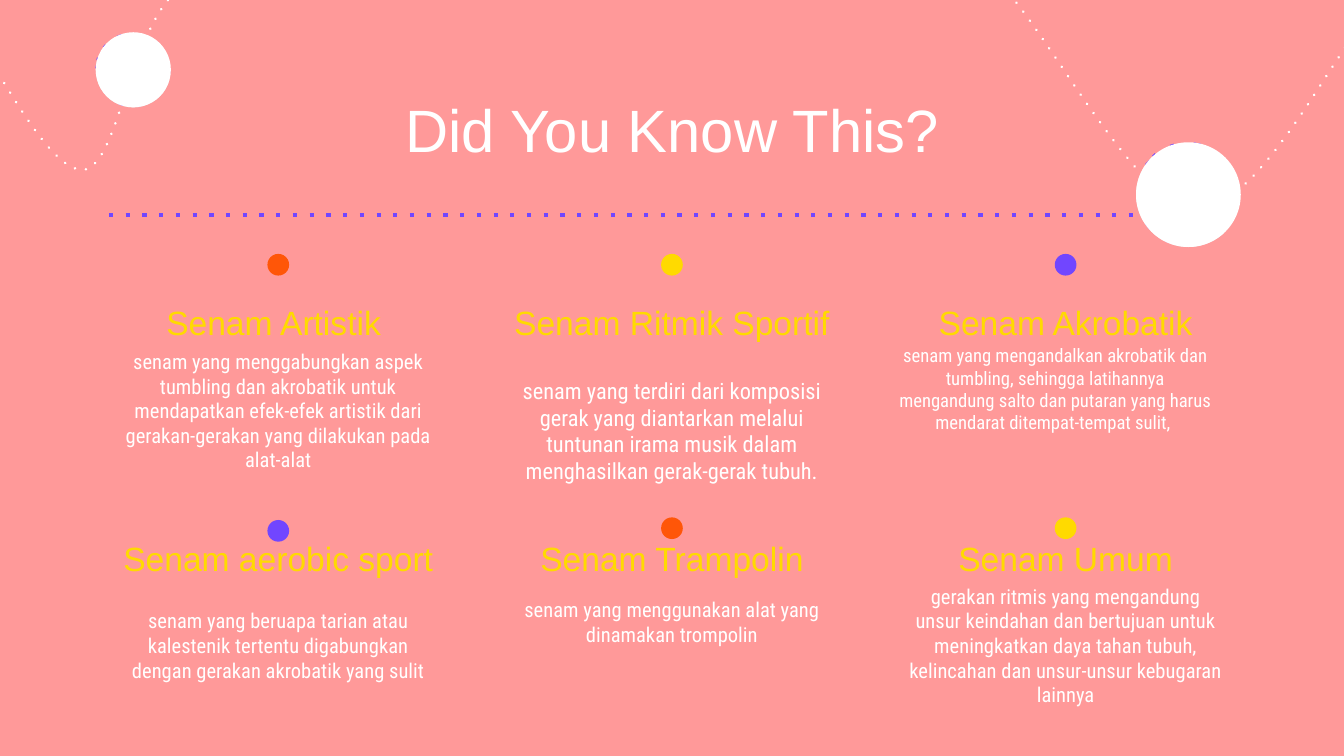
import math

import pptx
import pptx.chart.data
import pptx.dml.color
import pptx.enum.dml
import pptx.enum.shapes
import pptx.enum.text
import pptx.util
from lxml import etree
from pptx.util import Cm

COLORS = {"pink": "FF9999", "white": "FFFFFF", "yellow": "FFDA00",
          "orange": "FF5608", "violet": "7146FF", "shade": "EAEBEC"}
HEADING_FONT, BODY_FONT = "Arial", "Roboto Condensed"
COLUMN_LEFT, COLUMN_STEP, COLUMN_WIDTH = 2.01, 7.44, 6.5
DOT_SIZE = 0.41

ROWS = [
    (5.46, [
        ("Senam Artistik ", "senam yang menggabungkan aspek tumbling dan akrobatik untuk "
         "mendapatkan efek-efek artistik dari gerakan-gerakan yang dilakukan pada alat-alat",
         0, 6.96, 11, "orange", 4.8),
        ("Senam Ritmik Sportif", "senam yang terdiri dari komposisi gerak yang diantarkan "
         "melalui tuntunan irama musik dalam menghasilkan gerak-gerak tubuh.",
         0, 7.34, 12, "yellow", 4.8),
        ("Senam Akrobatik", "senam yang mengandalkan akrobatik dan tumbling, sehingga latihannya "
         "mengandung salto dan putaran yang harus mendarat ditempat-tempat sulit, ",
         -0.2, 6.55, 10, "violet", 4.8),
    ]),
    (9.91, [
        ("Senam aerobic sport", "senam yang beruapa tarian atau kalestenik tertentu "
         "digabungkan dengan gerakan akrobatik yang sulit",
         0, 11.4, 11, "violet", 9.83),
        ("Senam Trampolin", "senam yang menggunakan alat yang dinamakan trompolin",
         0, 10.95, 11, "orange", 9.78),
        ("Senam Umum", "gerakan ritmis yang mengandung unsur keindahan dan bertujuan untuk "
         "meningkatkan daya tahan tubuh, kelincahan dan unsur-unsur kebugaran lainnya",
         0, 11.4, 11, "yellow", 9.78),
    ]),
]

RIGHT_TRAIL = [(17.5, -0.25), (17.73, -0.28), (17.98, -1.09), (18.82, -0.38), (19.66, 0.33),
               (21.39, 3.78), (22.53, 3.96), (23.67, 4.11), (25.12, 1.17), (25.63, 0.64)]
LEFT_TRAIL = [(-0.38, 0.86), (-0.05, 1.24), (0.99, 3.38), (1.63, 3.2), (2.29, 3.0),
              (2.49, 0.25), (3.53, -0.3), (4.55, -0.86), (7.11, -0.2), (7.82, -0.2)]

BALL_UNITS = 78
SIDE_SEAM = [(-29, -26), (-32, -23), (-32, 22), (-29, 26)]
PANEL_SEAMS = [(4, -39), (29, -11), (16, -6), (-11, -38), (-14, -37), (13, -5), (1, -1),
               (-25, -31), (-27, -29), (-17, -17), (-17, 35), (-14, 36), (-14, -14), (-2, 0),
               (-2, 38), (1, 38), (1, 34), (30, 24), (33, 20), (1, 31), (1, 18), (38, 5),
               (38, 2), (1, 15), (1, 2), (37, -11), (36, -13), (31, -12), (9, -38)]


def arc(x, y, radius, start, end, steps=24):
    """Return points along a circular arc, angles in degrees."""
    angles = [math.radians(start + (end - start) * i / steps) for i in range(steps + 1)]
    return [(x + radius * math.cos(a), y + radius * math.sin(a)) for a in angles]


def bezier(knots, steps=24):
    """Return points along a chain of cubic curves."""
    points = [knots[0]]
    for first in range(0, len(knots) - 1, 3):
        curve = knots[first:first + 4]
        for i in range(1, steps + 1):
            t = i / steps
            weights = [(1 - t) ** 3, 3 * t * (1 - t) ** 2, 3 * t * t * (1 - t), t ** 3]
            points.append(tuple(sum(w * p[axis] for w, p in zip(weights, curve))
                                for axis in (0, 1)))
    return points


class Board:
    """Hold the style and the slide being drawn."""

    def __init__(self, slide):
        self.slide = slide
        self.slide.background.fill.solid()
        self.slide.background.fill.fore_color.rgb = self.rgb("pink")

    def rgb(self, color):
        return pptx.dml.color.RGBColor.from_string(COLORS[color])

    def paint(self, shape, color):
        shape.shadow.inherit = False
        shape.fill.solid()
        shape.fill.fore_color.rgb = self.rgb(color)
        shape.line.fill.background()

    def dotted(self, shape, color, width, cap):
        shape.line.color.rgb = self.rgb(color)
        shape.line.width = pptx.util.Pt(width)
        shape.line.dash_style = pptx.enum.dml.MSO_LINE.ROUND_DOT
        dash = shape._element.xpath(".//a:prstDash")[0]
        dash.set("val", "dot")
        dash.getparent().set("cap", cap)

    def text(self, wording, left, top, width, height, font, size, color, middle=False):
        box = self.slide.shapes.add_textbox(Cm(left), Cm(top), Cm(width), Cm(height))
        frame = box.text_frame
        frame.word_wrap = True
        frame.margin_left = frame.margin_right = Cm(0.25)
        frame.margin_top = frame.margin_bottom = Cm(0.25)
        anchors = pptx.enum.text.MSO_ANCHOR
        frame.vertical_anchor = anchors.MIDDLE if middle else anchors.TOP
        paragraph = frame.paragraphs[0]
        paragraph.text = wording
        paragraph.alignment = pptx.enum.text.PP_ALIGN.CENTER
        paragraph.font.name = font
        paragraph.font.size = pptx.util.Pt(size)
        paragraph.font.color.rgb = self.rgb(color)

    def rule(self, left, right, y, color):
        line = self.slide.shapes.add_connector(
            pptx.enum.shapes.MSO_CONNECTOR.STRAIGHT, Cm(left), Cm(y), Cm(right), Cm(y))
        self.dotted(line, color, 2.25, "flat")
        etree.SubElement(line._element.spPr, pptx.oxml.ns.qn("a:effectLst"))

    def disc(self, x, y, diameter, color, shapes=None):
        disc = (shapes or self.slide.shapes).add_shape(
            pptx.enum.shapes.MSO_SHAPE.OVAL, Cm(x - diameter / 2), Cm(y - diameter / 2),
            Cm(diameter), Cm(diameter))
        self.paint(disc, color)

    def outline(self, shapes, points, close):
        points = [(Cm(x), Cm(y)) for x, y in points]
        builder = shapes.build_freeform(*points[0])
        builder.add_line_segments(points[1:], close=close)
        return builder.convert_to_shape()

    def trail(self, knots):
        trail = self.outline(self.slide.shapes, bezier(knots), False)
        trail.shadow.inherit = False
        trail.fill.background()
        self.dotted(trail, "white", 1.5, "rnd")

    def ball(self, x, y, diameter, turn=0):
        shapes = self.slide.shapes.add_group_shape().shapes
        scale = diameter / BALL_UNITS
        cos, sin = math.cos(math.radians(turn)), math.sin(math.radians(turn))
        crescent = arc(0, 0, 39, 47, 227) + arc(18, -16.5, 46, 195, 80)
        self.disc(x, y, diameter, "white", shapes)
        for part, color in [(crescent, "shade"), (SIDE_SEAM, "violet"), (PANEL_SEAMS, "violet")]:
            turned = [(x + scale * (u * cos - v * sin), y + scale * (u * sin + v * cos))
                      for u, v in part]
            self.paint(self.outline(shapes, turned, True), color)


def main():
    deck = pptx.Presentation()
    deck.slide_width, deck.slide_height = Cm(25.4), Cm(14.29)
    board = Board(deck.slides.add_slide(deck.slide_layouts[6]))

    board.rule(2.06, 23.39, 4.06, "violet")
    board.text("Did You Know This?", 2.01, 1.5, 21.4, 1.6, HEADING_FONT, 32, "white")
    for heading_top, topics in ROWS:
        for column, topic in enumerate(topics):
            heading, body, shift, body_top, size, dot_color, dot_top = topic
            left = COLUMN_LEFT + column * COLUMN_STEP
            board.text(heading, left, heading_top, COLUMN_WIDTH, 1.42, HEADING_FONT, 18, "yellow")
            board.text(body, left + shift, body_top, COLUMN_WIDTH, 1.6, BODY_FONT, size,
                       "white", middle=True)
            board.disc(left + COLUMN_WIDTH / 2, dot_top + DOT_SIZE / 2, DOT_SIZE, dot_color)

    board.trail(RIGHT_TRAIL)
    board.trail(LEFT_TRAIL)
    board.ball(22.46, 3.68, 1.98)
    board.ball(2.52, 1.32, 1.42, turn=-32.2)
    deck.save("out.pptx")


if __name__ == "__main__":
    main()
